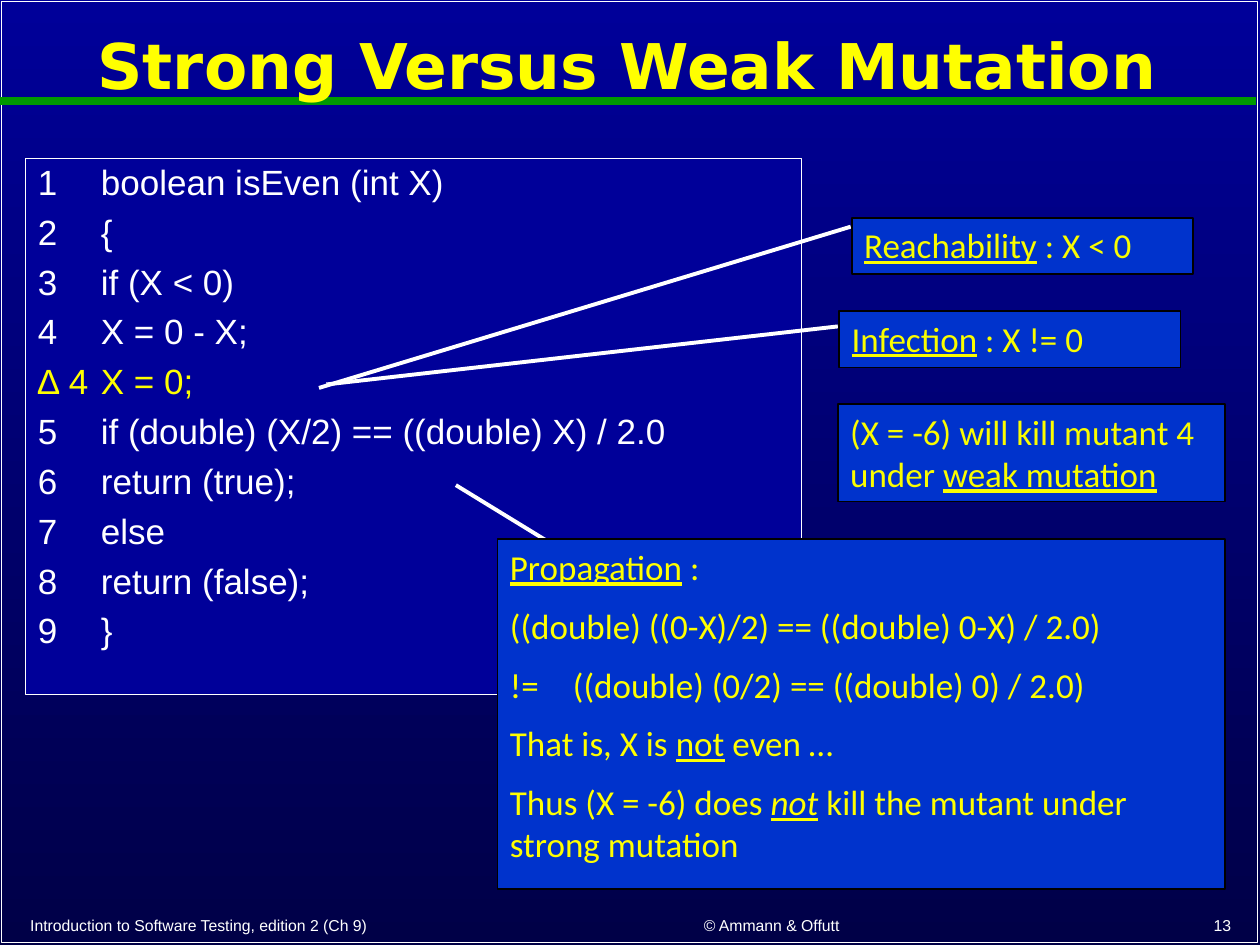
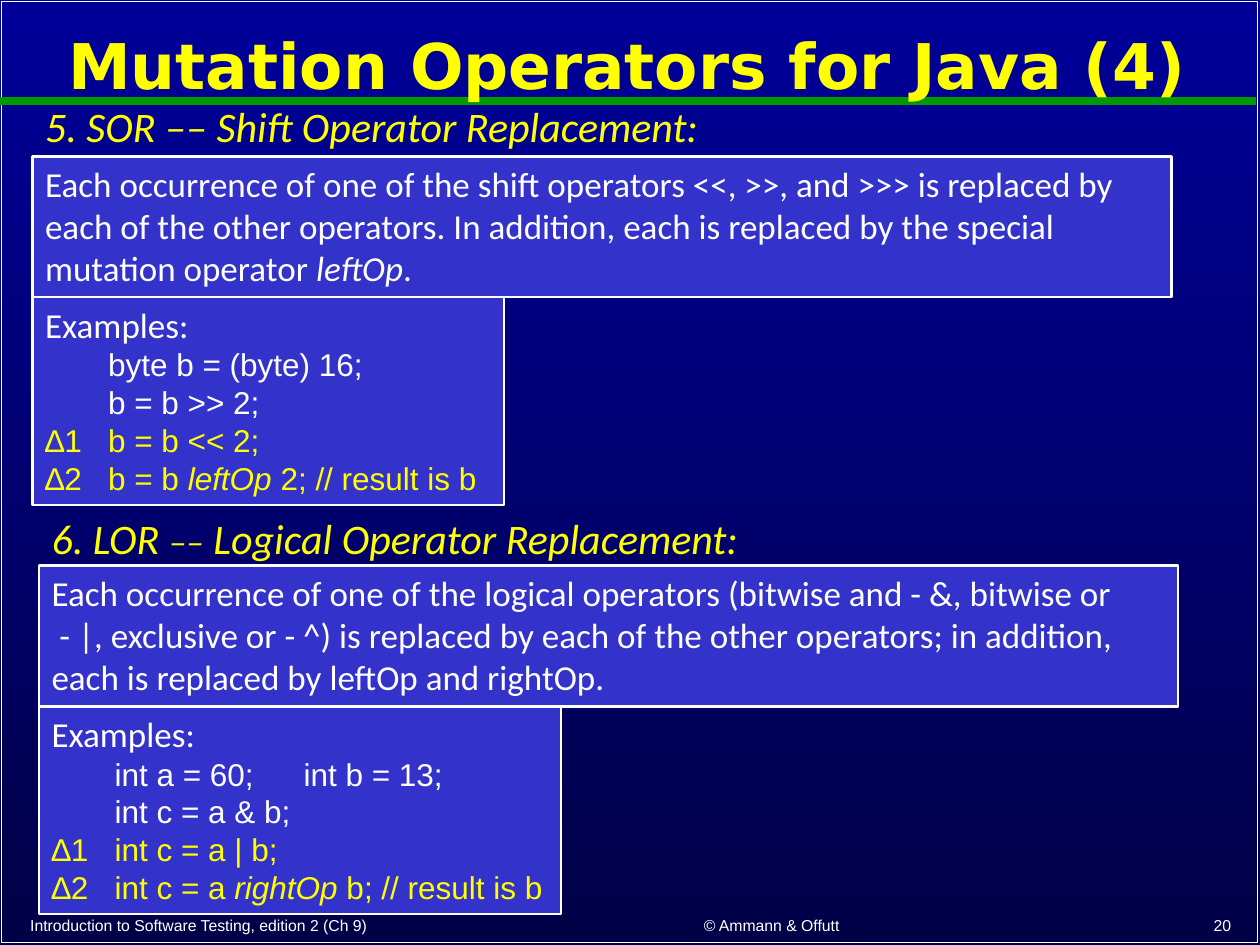
from dataclasses import dataclass

from lxml.etree import SubElement
from pptx import Presentation
from pptx.dml.color import RGBColor
from pptx.enum.shapes import MSO_CONNECTOR as Connector, MSO_SHAPE as Preset
from pptx.enum.text import MSO_ANCHOR as Anchor, MSO_AUTO_SIZE as AutoSize, PP_ALIGN as Align
from pptx.oxml.ns import qn
from pptx.util import Cm, Pt


@dataclass(frozen=True)
class Theme:
    navy: str = "000099"
    midnight: str = "000047"
    green: str = "009900"
    white: str = "FFFFFF"
    black: str = "000000"
    yellow: str = "FFFF00"
    lemon: str = "FAFD00"
    note_blue: str = "0033CC"
    rule_blue: str = "3333CC"
    title_font: str = "DejaVu Sans"
    text_font: str = "Calibri"
    code_font: str = "Arial"
    title_size: int = 36
    heading_size: int = 24
    text_size: int = 20
    code_size: int = 18
    footer_size: int = 9


THEME = Theme()
UNDERLINE = {"underline": True}
ITALIC = {"italic": True}

FOOTER = [
    ("Introduction to Software Testing, edition 2 (Ch 9)", 0.36, 10.82, Align.LEFT),
    ("© Ammann & Offutt", 11.53, 8.05, Align.CENTER),
]
PAGE_NUMBER_PLACE = (20.02, 5.05, Align.RIGHT)

IS_EVEN = {
    "title": "Strong Versus Weak Mutation",
    "page": "13",
    "code": [
        ("1", 1.37, "boolean isEven (int X)"),
        ("2", 1.37, "{"),
        ("3", 2.36, "if (X < 0)"),
        ("4", 3.35, "X = 0 - X;"),
        ("∆ 4", 3.38, "X = 0;"),
        ("5", 2.54, "if (double) (X/2) == ((double) X) / 2.0"),
        ("6", 3.35, "return (true);"),
        ("7", 2.54, "else"),
        ("8", 3.35, "return (false);"),
        ("9", 1.37, "}"),
    ],
    "pointers": [
        (17.15, 4.57, 6.43, 7.82),
        (16.89, 6.58, 6.58, 7.75),
        (12.88, 12.04, 9.19, 9.78),
    ],
    "notes": [
        ((17.17, 4.39, 6.88, 1.14), THEME.lemon,
         [[("Reachability", UNDERLINE), " : X < 0"]]),
        ((16.92, 6.27, 6.88, 1.14), THEME.lemon,
         [[("Infection", UNDERLINE), " : X != 0"]]),
        ((16.89, 8.15, 7.8, 1.96), THEME.lemon,
         [["(X = -6) will kill mutant 4 under ", ("weak mutation", UNDERLINE)]]),
        ((10.03, 10.87, 14.66, 7.06), THEME.yellow, [
            [("Propagation", UNDERLINE), " :"],
            ["((double) ((0-X)/2) == ((double) 0-X) / 2.0)"],
            ["!=\t((double) (0/2) == ((double) 0) / 2.0)"],
            ["That is, X is ", ("not", UNDERLINE), " even …"],
            ["Thus (X = -6) does ", ("not", UNDERLINE | ITALIC),
             " kill the mutant under strong mutation"],
        ]),
    ],
}

JAVA_OPERATORS = {
    "title": "Mutation Operators for Java (4)",
    "page": "20",
    "operators": [
        {
            "heading": ["5. SOR ", ("––", {"color": THEME.lemon}),
                        " Shift Operator Replacement:"],
            "left": 0.66, "heading_top": 1.9, "rule_top": 3.15,
            "rule": [[
                "Each occurrence of one of the shift operators <<, >>, and >>> is replaced by "
                "each of the other operators. In addition, each is replaced by the special "
                "mutation operator ", ("leftOp", ITALIC), "."]],
            "examples_width": 9.5,
            "stops": [1.26],
            "examples": [
                ["\tbyte b = (byte) 16;"],
                ["\tb = b >> 2;"],
                ["∆1\tb = b << 2;"],
                ["∆2\tb = b ", ("leftOp", ITALIC), " 2; // result is b"],
            ],
        },
        {
            "heading": ["6. LOR ", ("––", {"color": THEME.lemon, "size": THEME.text_size}),
                        " Logical Operator Replacement:"],
            "left": 0.79, "heading_top": 10.21, "rule_top": 11.4,
            "rule": [
                ["Each occurrence of one of the logical operators "
                 "(bitwise and - &, bitwise or"],
                [" - |, exclusive or - ^) is replaced by each of the other operators; "
                 "in addition, each is replaced by leftOp and rightOp."],
            ],
            "examples_width": 10.52,
            "stops": [1.08, 4.57],
            "examples": [
                ["\tint a = 60;\tint b = 13;"],
                ["\tint c = a & b;"],
                ["∆1\tint c = a | b;"],
                ["∆2\tint c = a ", ("rightOp", ITALIC), " b; // result is b"],
            ],
        },
    ],
}
RULE_WIDTH, RULE_HEIGHT, EXAMPLES_HEIGHT = 22.96, 2.84, 4.19

TITLE_LOOK = {"font": THEME.title_font, "size": THEME.title_size,
              "color": THEME.yellow, "bold": True}
HEADING_LOOK = {"font": THEME.text_font, "size": THEME.heading_size,
                "color": THEME.yellow, "italic": True}
TEXT_LOOK = {"font": THEME.text_font, "size": THEME.text_size, "color": THEME.white}
LISTING_LOOK = TEXT_LOOK | {"font": THEME.code_font}
CODE_LOOK = LISTING_LOOK | {"size": THEME.code_size}
FOOTER_LOOK = LISTING_LOOK | {"size": THEME.footer_size}


def rgb(color):
    return RGBColor.from_string(color)


def place(part, left, top, width, height):
    box = {"left": left, "top": top, "width": width, "height": height}
    for edge, length in box.items():
        setattr(part, edge, Cm(length))


def outline(part, color, width):
    part.line.color.rgb = rgb(color)
    part.line.width = Pt(width)


def mutant_look(look, text):
    return look | {"color": THEME.yellow} if text.startswith("∆") else look


def write(paragraph, runs, look, stops=(), **layout):
    for piece in runs:
        text, change = (piece, {}) if isinstance(piece, str) else piece
        style = look | change
        run = paragraph.add_run()
        run.text = text
        run.font.color.rgb = rgb(style["color"])
        values = {"name": style["font"], "size": Pt(style["size"])}
        values |= {key: style.get(key, False) for key in ("bold", "italic", "underline")}
        for key, value in values.items():
            setattr(run.font, key, value)
    props = paragraph._p.get_or_add_pPr()
    props.set("marL", "0")
    props.set("indent", "0")
    SubElement(props, qn("a:buNone"))
    if stops:
        tabs = SubElement(props, qn("a:tabLst"))
        for stop in stops:
            SubElement(tabs, qn("a:tab"), pos=str(Cm(stop)), algn="l")
    for key, value in ({"space_before": Pt(0)} | layout).items():
        setattr(paragraph, key, value)


def fill_text(part, rows, anchor=Anchor.TOP, gap=0, **layout):
    frame = part.text_frame
    for key, value in {"word_wrap": True, "auto_size": AutoSize.NONE,
                       "vertical_anchor": anchor}.items():
        setattr(frame, key, value)
    for index, (runs, look, stops) in enumerate(rows):
        paragraph = frame.add_paragraph() if index else frame.paragraphs[0]
        write(paragraph, runs, look, stops, space_before=Pt(gap if index else 0), **layout)


def add_box(slide, box, fill, edge, edge_width, rows=(), gap=0):
    panel = slide.shapes.add_shape(Preset.RECTANGLE, *map(Cm, box))
    panel.shadow.inherit = False
    if fill:
        panel.fill.solid()
        panel.fill.fore_color.rgb = rgb(fill)
    else:
        panel.fill.background()
    outline(panel, edge, edge_width)
    fill_text(panel, rows, gap=gap, alignment=Align.LEFT)
    return panel


def add_label(slide, box, text, look, anchor=Anchor.TOP, align=Align.LEFT):
    label = slide.shapes.add_textbox(*map(Cm, box))
    fill_text(label, [(text, look, ())], anchor, alignment=align)


def add_line(slide, ends, color, width):
    line = slide.shapes.add_connector(Connector.STRAIGHT, *map(Cm, ends))
    outline(line, color, width)
    SubElement(line.element.spPr, qn("a:effectLst"))
    return line


def dress_master(master, slide):
    backdrop = master.background.fill
    backdrop.gradient()
    backdrop.gradient_angle = 270
    for stop, color in zip(backdrop.gradient_stops, (THEME.navy, THEME.midnight)):
        stop.color.rgb = rgb(color)
        stop.position = 0 if color == THEME.navy else 1
    border = add_box(slide, (0.03, 0.03, 25.32, 18.97), None, THEME.white, 1)
    title_rule = add_line(slide, (0, 2.03, 25.32, 2.03), THEME.green, 4.5)
    for number, part in enumerate((border, title_rule), 20):
        part.element.xpath(".//p:cNvPr")[0].set("id", str(number))
        master.shapes.element.append(part.element)


def add_frame(slide, content):
    title = slide.shapes.title
    place(title, 0.03, 0.28, 25.22, 2.24)
    fill_text(title, [([content["title"]], TITLE_LOOK, ())], Anchor.MIDDLE,
              alignment=Align.CENTER, line_spacing=0.9)
    for text, left, width, align in FOOTER + [(content["page"], *PAGE_NUMBER_PLACE)]:
        add_label(slide, (left, 18.22, width, 0.74), [text], FOOTER_LOOK, Anchor.BOTTOM, align)


def build_is_even(slide, content):
    listing = slide.placeholders[1]
    place(listing, 0.51, 3.2, 15.65, 10.8)
    listing.fill.solid()
    listing.fill.fore_color.rgb = rgb(THEME.navy)
    outline(listing, THEME.white, 0.75)
    rows = [([f"{number}\t{code}"], mutant_look(LISTING_LOOK, number), [stop])
            for number, stop, code in content["code"]]
    fill_text(listing, rows, gap=6.9, line_spacing=0.9, alignment=Align.LEFT)
    for ends in content["pointers"]:
        add_line(slide, ends, THEME.white, 2.25)
    for box, color, lines in content["notes"]:
        rows = [(runs, TEXT_LOOK | {"color": color}, [1.07]) for runs in lines]
        add_box(slide, box, THEME.note_blue, THEME.black, 1, rows, gap=9.6)


def build_java_operators(slide, content):
    for operator in content["operators"]:
        left, top = operator["left"], operator["rule_top"]
        add_label(slide, (left, operator["heading_top"], 20, 1.27),
                  operator["heading"], HEADING_LOOK)
        rule = [(runs, TEXT_LOOK, ()) for runs in operator["rule"]]
        examples = [(["Examples:"], TEXT_LOOK, ())]
        examples += [(runs, mutant_look(CODE_LOOK, runs[0]), operator["stops"])
                     for runs in operator["examples"]]
        panels = [
            ((left, top, RULE_WIDTH, RULE_HEIGHT), rule),
            ((left, top + RULE_HEIGHT, operator["examples_width"], EXAMPLES_HEIGHT), examples),
        ]
        for box, rows in panels:
            add_box(slide, box, THEME.rule_blue, THEME.white, 1.5, rows)


def main():
    deck = Presentation()
    deck.slide_width, deck.slide_height = Cm(25.4), Cm(19.05)
    pages = [(1, IS_EVEN, build_is_even), (5, JAVA_OPERATORS, build_java_operators)]
    for index, (layout, content, build) in enumerate(pages):
        slide = deck.slides.add_slide(deck.slide_layouts[layout])
        if index == 0:
            dress_master(deck.slide_master, slide)
        add_frame(slide, content)
        build(slide, content)
    deck.save("out.pptx")


if __name__ == "__main__":
    main()
